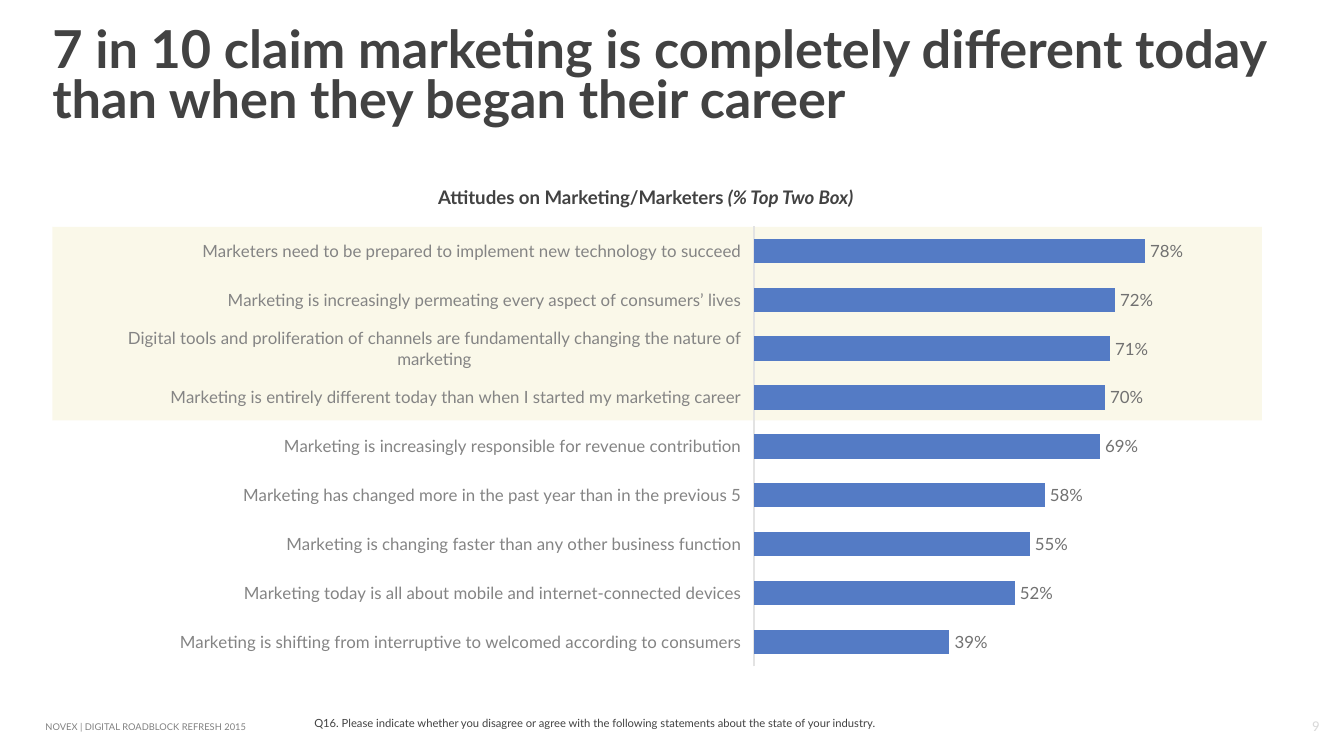
from dataclasses import dataclass

from lxml.etree import SubElement
from pptx import Presentation
from pptx.chart.data import CategoryChartData
from pptx.dml.color import RGBColor
from pptx.enum.chart import XL_CHART_TYPE, XL_LABEL_POSITION, XL_TICK_LABEL_POSITION, XL_TICK_MARK
from pptx.enum.shapes import MSO_SHAPE
from pptx.enum.text import MSO_ANCHOR, PP_ALIGN
from pptx.oxml import parse_xml
from pptx.oxml.ns import nsdecls, qn
from pptx.util import Cm, Pt


@dataclass(frozen=True)
class Theme:
    """Colours, fonts and type sizes of the slide."""
    ink: str = "424242"
    category: str = "848484"
    value: str = "717171"
    footer: str = "808080"
    number: str = "D9D9D9"
    axis: str = "E3E3E3"
    bar: str = "547BC5"
    highlight: str = "F6F2D4"
    font: str = "Lato"
    number_font: str = "Calibri"
    title_size: float = 28
    heading_size: float = 10
    chart_size: float = 9
    number_size: float = 8
    note_size: float = 6
    footer_size: float = 5


@dataclass(frozen=True)
class Box:
    """A rectangle in centimetres."""
    left: float
    top: float
    width: float
    height: float

    def place(self):
        """Return the four lengths python-pptx expects."""
        return Cm(self.left), Cm(self.top), Cm(self.width), Cm(self.height)


THEME = Theme()
ATTITUDES = [
    ("Marketing is shifting from interruptive to welcomed according to consumers", 0.39),
    ("Marketing today is all about mobile and internet-connected devices", 0.52),
    ("Marketing is changing faster than any other business function", 0.55),
    ("Marketing has changed more in the past year than in the previous 5", 0.58),
    ("Marketing is increasingly responsible for revenue contribution", 0.69),
    ("Marketing is entirely different today than when I started my marketing career", 0.70),
    ("Digital tools and proliferation of channels are fundamentally changing the nature of marketing", 0.71),
    ("Marketing is increasingly permeating every aspect of consumers’ lives", 0.72),
    ("Marketers need to be prepared to implement new technology to succeed", 0.78),
]


def style_font(font, size, color, name=THEME.font, bold=False):
    """Set size, colour, typeface and weight of a font."""
    font.size, font.name, font.bold = Pt(size), name, bold
    font.color.rgb = RGBColor.from_string(color)


def add_text(page, box, text, size, color, name=THEME.font, bold=False,
             anchor=MSO_ANCHOR.TOP, inset=True, wrap=True):
    """Add a one-paragraph text box and return its paragraph."""
    frame = page.shapes.add_textbox(*box.place()).text_frame
    frame.word_wrap, frame.vertical_anchor = wrap, anchor
    if not inset:
        frame.margin_left = frame.margin_right = frame.margin_top = frame.margin_bottom = 0
    para = frame.paragraphs[0]
    para.add_run().text = text
    style_font(para.font, size, color, name, bold)
    return para


def add_title(page, box):
    """Add the slide headline."""
    para = add_text(page, box, "7 in 10 claim marketing is completely different today "
                    "than when they began their career",
                    THEME.title_size, THEME.ink, bold=True, anchor=MSO_ANCHOR.MIDDLE)
    para.line_spacing = 0.8


def add_heading(page, box):
    """Add the chart heading with its italic qualifier."""
    para = add_text(page, box, "Attitudes on Marketing/Marketers ", THEME.heading_size,
                    THEME.ink, bold=True, inset=False, wrap=False)
    span = para.add_run()
    span.text = "(% Top Two Box)"
    span.font.italic = True


def add_highlight(page, box):
    """Add the half-transparent band behind the top four attitudes."""
    band = page.shapes.add_shape(MSO_SHAPE.RECTANGLE, *box.place())
    band.shadow.inherit = False
    band.line.fill.background()
    band.fill.solid()
    band.fill.fore_color.rgb = RGBColor.from_string(THEME.highlight)
    color = band.fill._xPr.find(qn("a:solidFill"))[0]
    SubElement(color, qn("a:alpha"), val="50000")


def fix_plot_area(chart, left, top, width, height):
    """Pin the inner plot area, given as fractions of the chart."""
    plot_area = chart._chartSpace.chart.plotArea
    for old in plot_area.findall(qn("c:layout")):
        plot_area.remove(old)
    parts = [("xMode", "edge"), ("yMode", "edge"), ("x", left), ("y", top), ("w", width), ("h", height)]
    inner = "".join(f'<c:{tag} val="{value}"/>' for tag, value in parts)
    plot_area.insert(0, parse_xml(
        f'<c:layout {nsdecls("c")}><c:manualLayout><c:layoutTarget val="inner"/>'
        f'{inner}</c:manualLayout></c:layout>'))


def add_attitude_chart(page, box):
    """Add the bar chart of attitudes."""
    chart_data = CategoryChartData(number_format="0%")
    chart_data.categories = [label for label, _ in ATTITUDES]
    chart_data.add_series("Series 1", [share for _, share in ATTITUDES])
    chart = page.shapes.add_chart(XL_CHART_TYPE.BAR_CLUSTERED, *box.place(), chart_data).chart
    chart.has_legend = chart.has_title = False
    style_font(chart.font, THEME.chart_size, THEME.ink)

    categories = chart.category_axis
    categories.major_tick_mark = categories.minor_tick_mark = XL_TICK_MARK.NONE
    categories.tick_label_position = XL_TICK_LABEL_POSITION.LOW
    categories.format.line.color.rgb = RGBColor.from_string(THEME.axis)
    categories.format.line.width = Pt(0.75)
    style_font(categories.tick_labels.font, THEME.chart_size, THEME.category)

    values = chart.value_axis
    values.visible = values.has_major_gridlines = False
    values.minimum_scale, values.maximum_scale = 0, 0.9

    plot = chart.plots[0]
    plot.gap_width, plot.vary_by_categories = 100, False
    fill = plot.series[0].format.fill
    fill.solid()
    fill.fore_color.rgb = RGBColor.from_string(THEME.bar)
    plot.has_data_labels = True
    labels = plot.data_labels
    labels.show_value, labels.position = True, XL_LABEL_POSITION.OUTSIDE_END
    labels.number_format, labels.number_format_is_linked = "0%", False
    style_font(labels.font, THEME.chart_size, THEME.value)
    fix_plot_area(chart, 0.574, 0.02, 0.405, 0.96)


def add_footer(page, box):
    """Add the report name, the survey question and the page number."""
    add_text(page, Box(box.left, box.top + 0.23, 4.9, 0.2), "NOVEX | DIGITAL ROADBLOCK REFRESH 2015",
             THEME.footer_size, THEME.footer, anchor=MSO_ANCHOR.MIDDLE, inset=False)
    add_text(page, Box(box.left + 4.83, box.top, 15.29, 0.51),
             "Q16. Please indicate whether you disagree or agree with the following "
             "statements about the state of your industry.", THEME.note_size, THEME.ink)
    number = add_text(page, Box(box.left + box.width - 0.71, box.top + 0.15, 0.71, 0.33), "9",
                      THEME.number_size, THEME.number, THEME.number_font,
                      anchor=MSO_ANCHOR.BOTTOM, inset=False)
    number.alignment = PP_ALIGN.CENTER


def main():
    """Build and save the deck."""
    deck = Presentation()
    deck.slide_width, deck.slide_height = Cm(25.4), Cm(14.29)
    page = deck.slides.add_slide(deck.slide_layouts[6])
    add_highlight(page, Box(0.99, 4.29, 22.86, 3.66))
    add_title(page, Box(0.74, 0.41, 24.13, 2.16))
    add_attitude_chart(page, Box(2.16, 4.11, 21.06, 8.66))
    add_heading(page, Box(8.28, 3.51, 8.86, 0.43))
    add_footer(page, Box(0.86, 13.41, 24.36, 0.51))
    deck.save("out.pptx")


if __name__ == "__main__":
    main()
